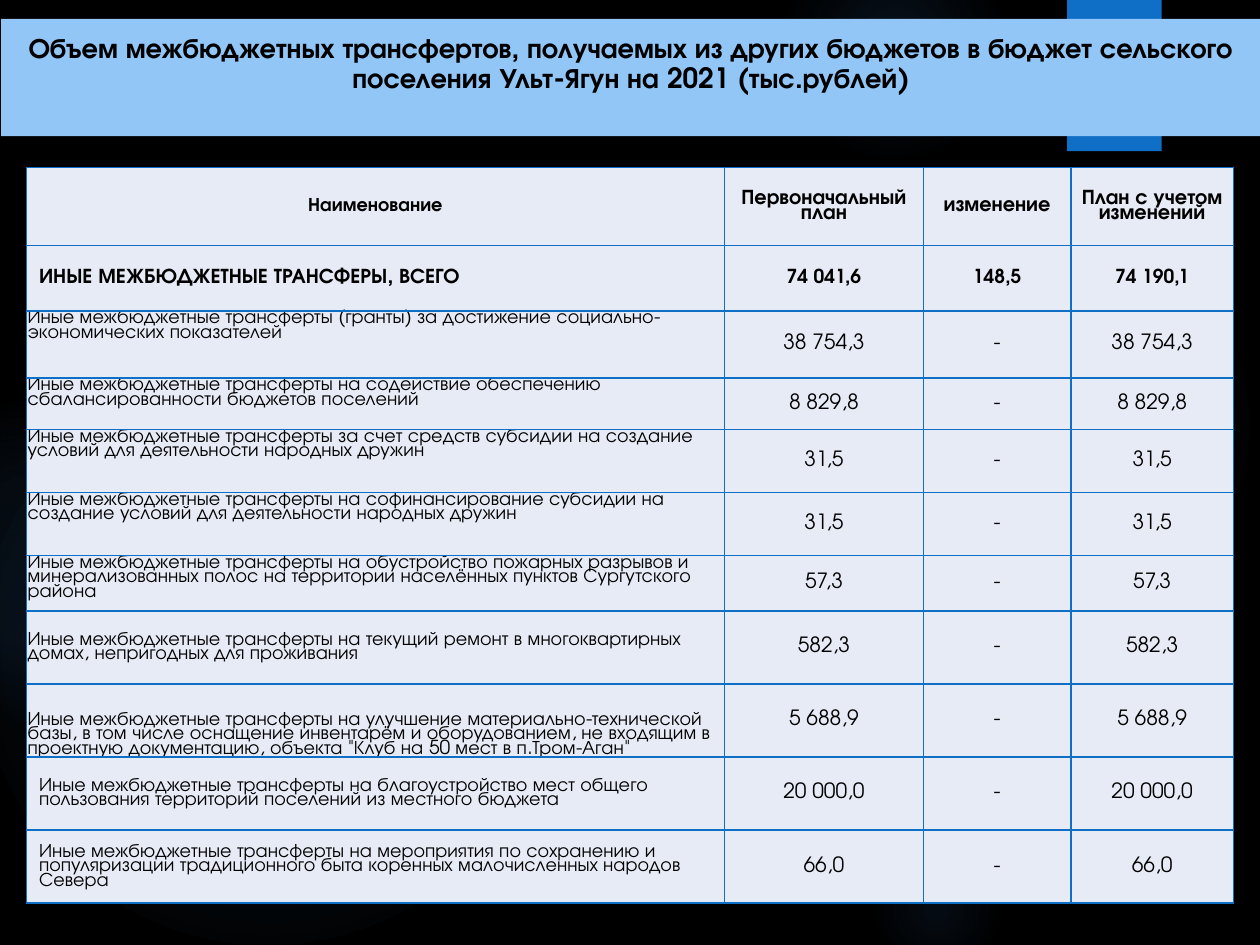
from lxml import etree
from pptx import Presentation
from pptx import util as u
from pptx.dml.color import RGBColor
from pptx.enum import shapes, text
from pptx.oxml import parse_xml
from pptx.oxml.ns import nsdecls, qn

BLACK = RGBColor(0x00, 0x00, 0x00)
BLUE = RGBColor(0x0F, 0x6F, 0xC6)
GLOW_BLUE = RGBColor(0x44, 0x8A, 0xD7)
PALE_BLUE = RGBColor(0x91, 0xC6, 0xF7)
CELL_GREY = RGBColor(0xE7, 0xEB, 0xF5)
FONT = "TeX Gyre Adventor"
MIDDLE, TOP, BOTTOM = (text.MSO_ANCHOR.MIDDLE, text.MSO_ANCHOR.TOP,
                       text.MSO_ANCHOR.BOTTOM)
CENTER, LEFT = text.PP_ALIGN.CENTER, text.PP_ALIGN.LEFT

TITLE = ("Объем межбюджетных трансфертов, получаемых из других бюджетов в бюджет "
         "сельского поселения Ульт-Ягун на 2021 (тыс.рублей)")
HEADINGS = ["Наименование", "Первоначальный план", "изменение",
            "План с учетом изменений"]
TOTAL = ["ИНЫЕ МЕЖБЮДЖЕТНЫЕ ТРАНСФЕРЫ, ВСЕГО", "74 041,6", "148,5", "74 190,1"]
COMMON = "Иные межбюджетные трансферты "
# purpose, amount, anchor of the purpose, its left inset, row height
TRANSFERS = [
    ("(гранты) за достижение социально-экономических показателей",
     "38 754,3", TOP, 0.01, 0.53),
    ("на содействие обеспечению сбалансированности бюджетов поселений",
     "8 829,8", TOP, 0.01, 0.41),
    ("за счет средств субсидии на создание условий для деятельности "
     "народных дружин", "31,5", TOP, 0.01, 0.5),
    ("на софинансирование субсидии на создание условий для деятельности "
     "народных дружин", "31,5", TOP, 0.01, 0.5),
    ("на обустройство пожарных разрывов и минерализованных полос на территории "
     "населённых пунктов Сургутского района", "57,3", TOP, 0.01, 0.44),
    ("на текущий ремонт в многоквартирных домах, непригодных для проживания",
     "582,3", MIDDLE, 0.01, 0.58),
    ("на улучшение материально-технической базы, в том числе оснащение инвентарём "
     "и оборудованием, не входящим в проектную документацию, объекта "
     "\"Клуб на 50 мест в п.Тром-Аган\"", "5 688,9", BOTTOM, 0.01, 0.58),
    ("на благоустройство мест общего пользования территорий поселений из местного "
     "бюджета", "20 000,0", MIDDLE, 0.1, 0.58),
    ("на мероприятия по сохранению и популяризации традиционного быта коренных "
     "малочисленных народов Севера", "66,0", MIDDLE, 0.1, 0.58),
]
COLUMNS = [5.54, 1.58, 1.17, 1.29]
# left, top, diameter, (position, opacity) stops in percent
GLOWS = [
    (6.89, 1.83, 3.08, [(0, 7), (36, 6), (69, 0)]),
    (6.22, -0.5, 1.75, [(0, 14), (36, 7), (73, 0)]),
    (6.89, 6.67, 1.08, [(0, 9), (36, 5), (66, 0)]),
    (-0.17, 2.92, 4.58, [(0, 11), (36, 10), (75, 0)]),
    (-0.92, 3.17, 2.58, [(0, 8), (36, 8), (72, 0)]),
]


class Deck:
    """Style and current slide; lengths are in a grid of one-inch units."""

    def __init__(self, columns, rows):
        self.file = Presentation()
        self.file.slide_width = u.Inches(columns)
        self.file.slide_height = u.Inches(rows)
        self.slide = self.file.slides.add_slide(self.file.slide_layouts[5])
        fill = self.slide.background.fill
        fill.solid()
        fill.fore_color.rgb = BLACK

    def place(self, *lengths):
        return [u.Inches(length) for length in lengths]

    def set_words(self, frame, words, size, bold, align, spacing):
        frame.text = words
        paragraph = frame.paragraphs[0]
        paragraph.alignment, paragraph.line_spacing = align, spacing
        font = paragraph.runs[0].font
        look = {"name": FONT, "size": u.Pt(size), "bold": bold}
        for name, value in look.items():
            setattr(font, name, value)
        font.color.rgb = BLACK

    def block(self, kind, left, top, width, height, color):
        shape = self.slide.shapes.add_shape(
            kind, *self.place(left, top, width, height))
        shape.shadow.inherit = False
        shape.line.fill.background()
        shape.fill.solid()
        shape.fill.fore_color.rgb = color
        return shape

    def glow(self, left, top, diameter, stops):
        shape = self.block(shapes.MSO_SHAPE.OVAL, left, top, diameter, diameter,
                           GLOW_BLUE)
        marks = "".join(
            f'<a:gs pos="{pos * 1000}"><a:srgbClr val="{GLOW_BLUE}">'
            f'<a:alpha val="{alpha * 1000}"/></a:srgbClr></a:gs>'
            for pos, alpha in stops)
        gradient = parse_xml(
            f'<a:gradFill {nsdecls("a")}><a:gsLst>{marks}</a:gsLst>'
            '<a:path path="circle"><a:fillToRect l="50000" t="50000" r="50000" '
            'b="50000"/></a:path></a:gradFill>')
        properties = shape._element.spPr
        properties.replace(properties.find(qn("a:solidFill")), gradient)

    def title(self, words, left, top, width, height):
        title = self.slide.shapes.title
        box = dict(zip(("left", "top", "width", "height"),
                       self.place(left, top, width, height)))
        for name, value in box.items():
            setattr(title, name, value)
        title._element.spPr.append(parse_xml(
            f'<a:prstGeom {nsdecls("a")} prst="roundRect"><a:avLst>'
            '<a:gd name="adj" fmla="val 21700"/></a:avLst></a:prstGeom>'))
        title.fill.solid()
        title.fill.fore_color.rgb = PALE_BLUE
        frame = title.text_frame
        layout = {"word_wrap": True, "auto_size": text.MSO_AUTO_SIZE.NONE,
                  "vertical_anchor": TOP, "margin_top": u.Inches(0.12),
                  "margin_left": u.Inches(0.1), "margin_right": u.Inches(0.1)}
        for name, value in layout.items():
            setattr(frame, name, value)
        self.set_words(frame, words, 16, True, CENTER, 0.9)
        # Bring the title in front of the band
        self.slide.shapes._spTree.append(title._element)

    def table(self, left, top, columns, rows):
        table = self.slide.shapes.add_table(
            len(rows), len(columns),
            *self.place(left, top, sum(columns), sum(rows))).table
        for column, width in zip(table.columns, columns):
            column.width = u.Inches(width)
        for row, height in zip(table.rows, rows):
            row.height = u.Inches(height)
        return table

    def cell(self, cell, words, size=12, bold=False, align=CENTER, anchor=MIDDLE,
             inset=0.01):
        layout = {"vertical_anchor": anchor, "margin_left": u.Inches(inset),
                  "margin_right": u.Inches(0.01), "margin_top": u.Inches(0.01),
                  "margin_bottom": 0}
        for name, value in layout.items():
            setattr(cell, name, value)
        self.set_words(cell.text_frame, words, size, bold, align, 0.8)
        properties = cell._tc.get_or_add_tcPr()
        for side in ("lnL", "lnR", "lnT", "lnB"):
            line = etree.SubElement(properties, qn(f"a:{side}"), w=str(u.Pt(1)))
            paint = etree.SubElement(line, qn("a:solidFill"))
            etree.SubElement(paint, qn("a:srgbClr"), val=str(BLUE))
        cell.fill.solid()
        cell.fill.fore_color.rgb = CELL_GREY


def main():
    deck = Deck(10, 7.5)

    # Backdrop
    for glow in GLOWS:
        deck.glow(*glow)
    deck.block(shapes.MSO_SHAPE.RECTANGLE, 8.47, 0, 0.75, 1.2, BLUE)

    # Table of transfers
    heights = [0.62, 0.52] + [transfer[-1] for transfer in TRANSFERS]
    budget = deck.table(0.21, 1.33, COLUMNS, heights)
    for column, (heading, total) in enumerate(zip(HEADINGS, TOTAL)):
        first = column == 0
        deck.cell(budget.cell(0, column), heading, 11 if first else 12, True)
        deck.cell(budget.cell(1, column), total, 12 if first else 11, True,
                  LEFT if first else CENTER, inset=0.1 if first else 0.01)
    for row, (purpose, amount, anchor, inset, _) in enumerate(TRANSFERS, 2):
        deck.cell(budget.cell(row, 0), COMMON + purpose, 11, False, LEFT, anchor,
                  inset)
        for column, value in enumerate((amount, "-", amount), 1):
            deck.cell(budget.cell(row, column), value)

    # Title
    deck.title(TITLE, 0.01, 0.15, 10, 0.93)
    deck.file.save("out.pptx")


if __name__ == "__main__":
    main()
